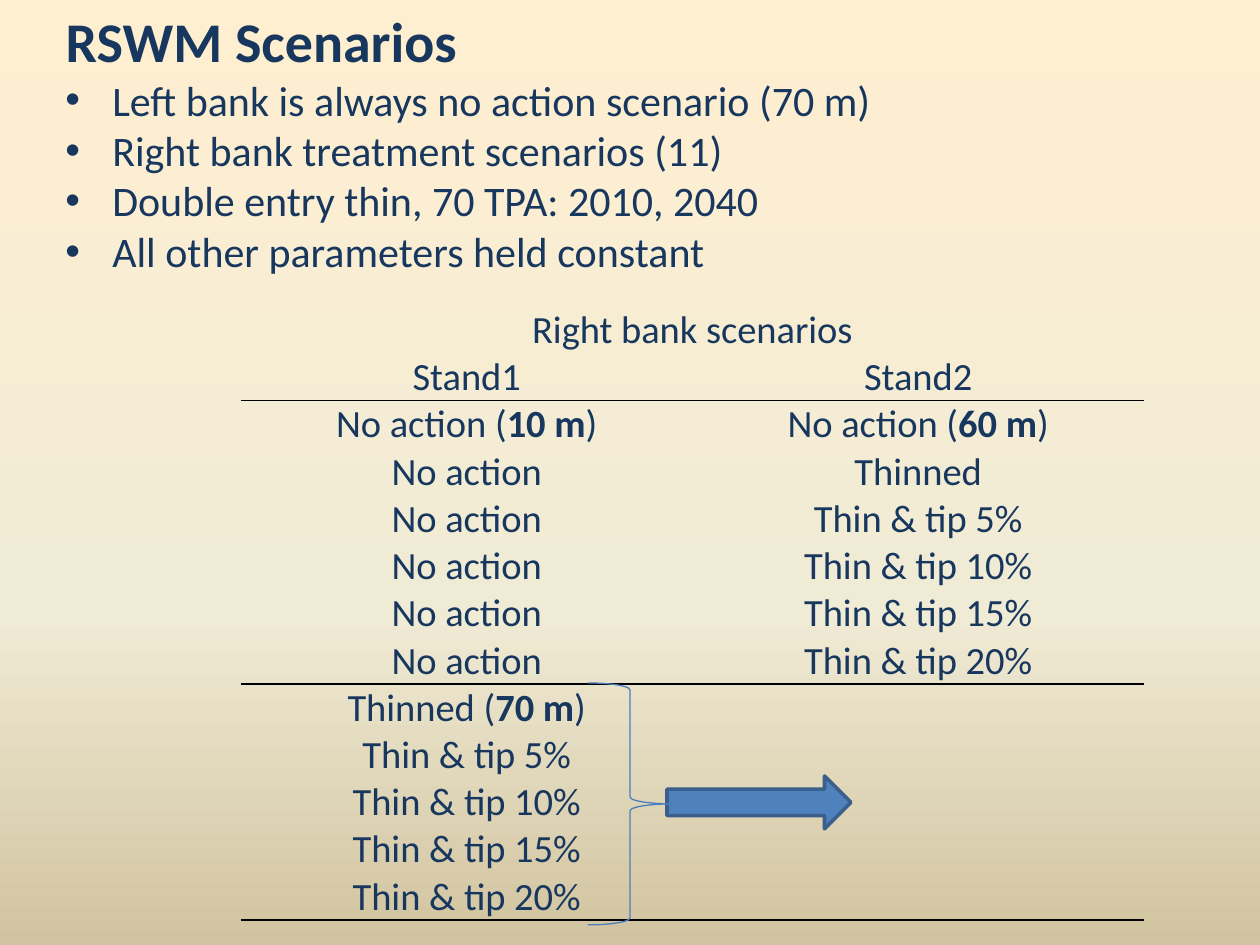
from copy import deepcopy
from lxml.etree import SubElement as Sub, Element
from pptx import Presentation
from pptx.dml.color import RGBColor
from pptx.enum.shapes import MSO_SHAPE as Shape
from pptx.enum.text import MSO_ANCHOR as Anchor, PP_ALIGN as Align
from pptx.oxml.ns import qn
from pptx.util import Emu, Pt

PX = 914400 // 126
NAVY = "17375E"


def rgb(code):
    return RGBColor.from_string(code)


def style(font, size, bold=False):
    font.name, font.size, font.bold = "Calibri", Pt(size), bold
    font.color.rgb = rgb(NAVY)


prs = Presentation()
prs.slide_width, prs.slide_height = Emu(1260 * PX), Emu(945 * PX)
slide = prs.slides.add_slide(prs.slide_layouts[5])

# Background gradient, top to bottom
back = slide.background.fill
back.gradient()
back.gradient_angle = 270
stops = slide._element.find(".//" + qn("a:gsLst"))
stops.append(deepcopy(stops[-1]))
for stop, (pos, code) in zip(
        back.gradient_stops,
        [(0, "FFEFD1"), (0.65, "F0EBD5"), (1, "D1C39F")]):
    stop.position = pos
    stop.color.rgb = rgb(code)

# Title
title = slide.shapes.title
title.left, title.top = Emu(53 * PX), Emu(0)
title.width, title.height = Emu(1124 * PX), Emu(80 * PX)
frame = title.text_frame
frame.text = "RSWM Scenarios"
frame.vertical_anchor = Anchor.TOP
head = frame.paragraphs[0]
head.alignment = Align.LEFT
style(head.font, 32, True)

# Bullets
box = slide.shapes.add_textbox(53 * PX, 68 * PX, 1124 * PX, 217 * PX)
frame = box.text_frame
frame.word_wrap = True
frame.text = "\n".join([
    "Left bank is always no action scenario (70 m)",
    "Right bank treatment scenarios (11)",
    "Double entry thin, 70 TPA: 2010, 2040",
    "All other parameters held constant",
])
for para in frame.paragraphs:
    props = para._p.get_or_add_pPr()
    props.set("marL", str(47 * PX))
    props.set("indent", str(-47 * PX))
    Sub(props, qn("a:buFont"), typeface="Arial")
    Sub(props, qn("a:buChar"), char="•")
    style(para.font, 24)

# Scenario table; text between bars is bold
tips = [f"Thin & tip {n}%" for n in (5, 10, 15, 20)]
rows = [
    ("Right bank scenarios", ""),
    ("Stand1", "Stand2"),
    ("No action (|10 m|)", "No action (|60 m|)"),
    ("No action", "Thinned"),
    *[("No action", tip) for tip in tips],
    ("Thinned (|70 m|)", ""),
    *[(tip, "") for tip in tips],
]
ruled = {1, 7, 12}
grid = slide.shapes.add_table(
    len(rows), 2, 241 * PX, 306 * PX, 903 * PX, len(rows) * 47 * PX).table
grid._tbl.tblPr.find(qn("a:tableStyleId")).text = \
    "{2D5ABB26-0587-4C30-8999-92F81FD0307C}"
grid.first_row = grid.horz_banding = False
grid.cell(0, 0).merge(grid.cell(0, 1))
for r, row in enumerate(rows):
    for c, text in enumerate(row):
        cell = grid.cell(r, c)
        cell.fill.background()
        cell.vertical_anchor = Anchor.BOTTOM
        cell.margin_left = cell.margin_right = cell.margin_top = Emu(PX)
        cell.margin_bottom = Emu(0)
        para = cell.text_frame.paragraphs[0]
        para.alignment = Align.CENTER
        style(para.font, 22)
        if text:
            for i, part in enumerate(text.split("|")):
                run = para.add_run()
                run.text = part
                if i == 1:
                    run.font.bold = True
        if r in ruled:
            rule = Element(qn("a:lnB"), w=str(Pt(1)))
            fill = Sub(rule, qn("a:solidFill"))
            Sub(fill, qn("a:srgbClr"), val="000000")
            cell._tc.get_or_add_tcPr().insert(0, rule)

# Arrow and brace beside the thinned rows
for kind, spot, fill, line, width in [
        (Shape.RIGHT_ARROW, (667, 776, 184, 53), "4F81BD", "3A5F8C", 2),
        (Shape.RIGHT_BRACE, (588, 683, 84, 242), None, "4B7EBC", 0.75)]:
    shape = slide.shapes.add_shape(kind, *[n * PX for n in spot])
    shape.shadow.inherit = False
    if fill:
        shape.fill.solid()
        shape.fill.fore_color.rgb = rgb(fill)
    else:
        shape.fill.background()
    shape.line.color.rgb = rgb(line)
    shape.line.width = Pt(width)

prs.save("out.pptx")
